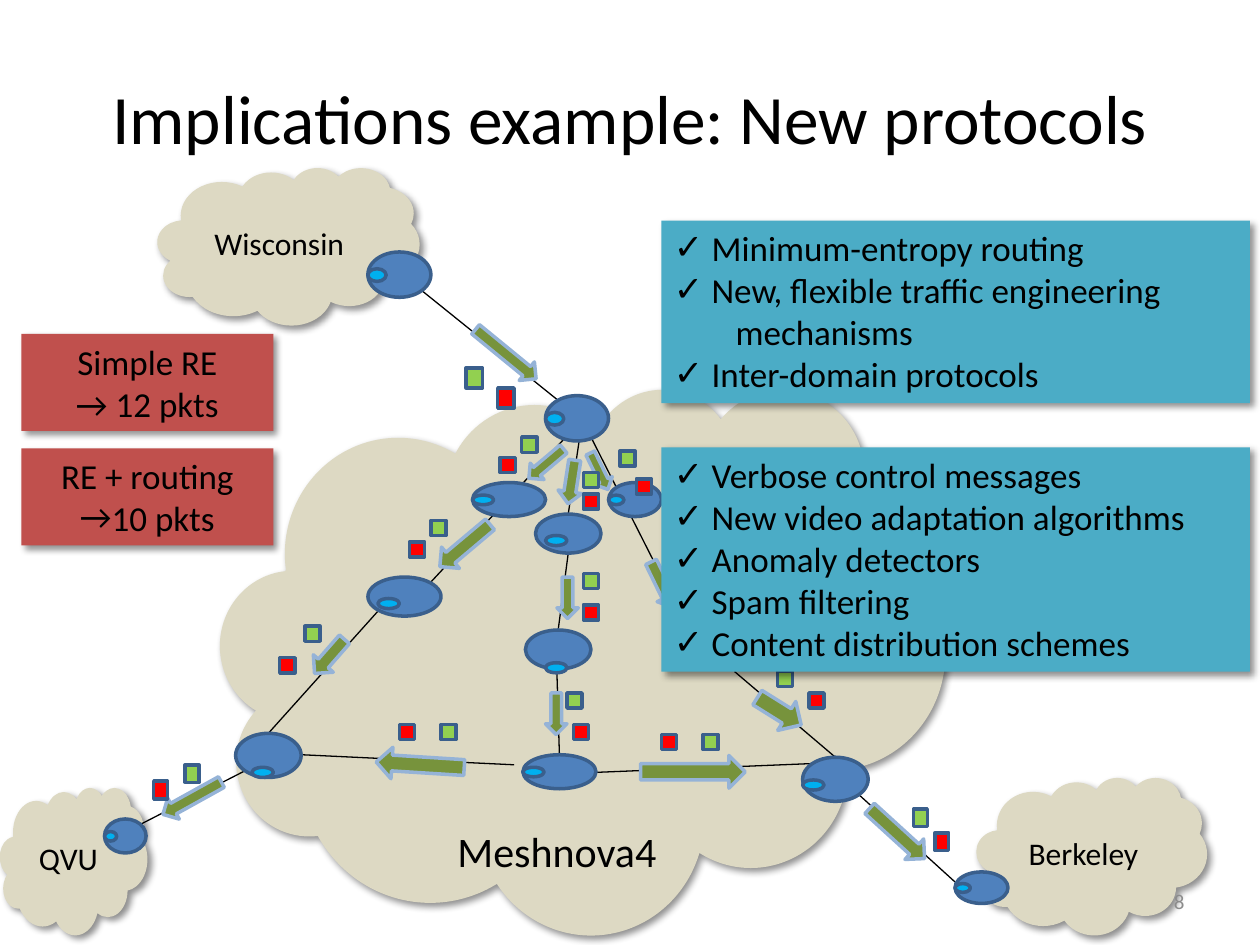
from lxml import etree
from pptx import Presentation
from pptx.dml.color import RGBColor
from pptx.enum.shapes import MSO_CONNECTOR, MSO_SHAPE
from pptx.enum.text import MSO_ANCHOR, PP_ALIGN
from pptx.oxml.ns import qn
from pptx.util import Inches, Pt

CLOUD, RECT, OVAL, ARROW = (MSO_SHAPE.CLOUD, MSO_SHAPE.RECTANGLE,
                            MSO_SHAPE.OVAL, MSO_SHAPE.DOWN_ARROW)
LEFT, CENTER, RIGHT = PP_ALIGN.LEFT, PP_ALIGN.CENTER, PP_ALIGN.RIGHT
TOP, MIDDLE = MSO_ANCHOR.TOP, MSO_ANCHOR.MIDDLE
FONT = "Calibri"
COLORS = {
    "cloud": "DDD9C3", "node": "4F81BD", "edge": "3A5F8C", "port": "00B0F0",
    "green": "92D050", "red": "FF0000", "arrow": "77933C", "arrow_edge": "95B3D7",
    "result": "C0504D", "list": "4BACC6", "text": "000000", "number": "8C8C8C",
}

# Content: boxes are (left, top, width, height)
TITLE = "Implications example: New protocols"
CLOUDS = [
    ((1.25, 1.33, 2.08, 1.25), "Wisconsin"),
    ((1.75, 3.08, 5.75, 4.33), ""),
    ((7.75, 6.17, 1.83, 1.25), "Berkeley"),
    ((0, 6.25, 1.17, 1.17), "QVU"),
]
LABELS = [
    ((3.42, 6.5, 2, 0.5), "Meshnova4", 24, "text", CENTER),
    ((7.17, 6.95, 2.33, 0.4), "8", 12, "number", RIGHT),
]
LINKS = [
    (3.34, 2.3, 4.47, 3.21), (4.62, 3.33, 3.41, 4.63), (3, 4.85, 2.13, 5.82),
    (4.62, 3.33, 5.49, 5.05), (5.83, 5.33, 6.63, 6.01), (4.61, 3.41, 4.51, 4.08),
    (4.51, 4.39, 4.43, 5), (4.42, 5.33, 4.44, 5.99), (4.08, 6.07, 2.39, 5.99),
    (4.73, 6.13, 6.45, 6.06), (1.94, 6.12, 1.12, 6.54), (6.82, 6.31, 7.58, 7),
]
# Node box, then the port's corner (None: at the left, in proportion)
NODES = [
    ((2.92, 4.58, 0.58, 0.31), (3, 4.75)),
    ((1.87, 5.82, 0.52, 0.35), (2, 6.09)),
    ((6.37, 6.01, 0.52, 0.35), (6.37, 6.19)),
    ((4.25, 4.08, 0.52, 0.31), (4.33, 4.25)),
    ((4.17, 5, 0.52, 0.31), (4.33, 5.26)),
    ((4.15, 5.99, 0.58, 0.27), None),
    ((2.92, 2, 0.5, 0.36), None),
    ((0.83, 6.5, 0.33, 0.27), None),
    ((7.58, 6.92, 0.42, 0.25), None),
    ((3.75, 3.83, 0.58, 0.27), None),
    ((4.83, 3.83, 0.42, 0.27), None),
    ((4.33, 3.14, 0.5, 0.36), None),
]
# Unrotated box and rotation of each flow arrow
ARROWS = [
    ((1.43, 6.07, 0.19, 0.53), 61), ((7.01, 6.32, 0.22, 0.59), 312.4),
    ((3.92, 2.5, 0.19, 0.62), 309.3), ((5.16, 4.44, 0.19, 0.4), 334),
    ((2.51, 5.03, 0.21, 0.36), 41.2), ((6.05, 5.44, 0.27, 0.41), 302),
    ((3.58, 4.07, 0.22, 0.52), 49.9), ((4.25, 3.5, 0.17, 0.36), 49.9),
    ((4.68, 3.58, 0.15, 0.32), 334), ((3.21, 5.72, 0.25, 0.7), 93.6),
    ((4.44, 3.65, 0.19, 0.35), 8.7), ((5.37, 5.71, 0.26, 0.83), 270),
    ((4.42, 4.58, 0.17, 0.33), 0), ((4.33, 5.5, 0.17, 0.33), 0),
]
# Packet size: corners of the green and the red packet of each pair
PACKETS = {
    (0.13, 0.16): [((3.7, 2.92), (3.95, 3.08))],
    (0.11, 0.14): [((7.25, 6.42), (7.42, 6.61)), ((1.47, 6.07), (1.22, 6.2))],
    (0.12, 0.12): [
        ((3.42, 4.13), (3.25, 4.3)), ((2.42, 4.97), (2.22, 5.22)),
        ((6.17, 5.33), (6.42, 5.5)), ((4.14, 3.47), (3.97, 3.63)),
        ((4.92, 3.58), (5.05, 3.8)), ((4.5, 5.5), (4.55, 5.75)),
        ((4.63, 4.55), (4.63, 4.8)), ((5.58, 5.83), (5.25, 5.83)),
        ((3.5, 5.75), (3.17, 5.75)), ((4.63, 3.75), (4.63, 3.92)),
    ],
}
# Panel lines are (bullet, left indent, text)
CHECK = ("✓", 0.3)
PANELS = [
    ((0.17, 3.56, 2, 0.77), "result", CENTER,
     [("", 0, "RE + routing"), ("→", 0, "10 pkts")]),
    ((0.17, 2.65, 2, 0.77), "result", CENTER,
     [("", 0, "Simple RE\v→ 12 pkts")]),
    ((5.25, 3.55, 4.67, 1.78), "list", LEFT,
     [(*CHECK, "Verbose control messages"), (*CHECK, "New video adaptation algorithms"),
      (*CHECK, "Anomaly detectors"), (*CHECK, "Spam filtering"),
      (*CHECK, "Content distribution schemes")]),
    ((5.25, 1.75, 4.67, 1.45), "list", LEFT,
     [(*CHECK, "Minimum-entropy routing"), (*CHECK, "New, flexible traffic engineering"),
      ("", 0.49, "mechanisms"), (*CHECK, "Inter-domain protocols")]),
]


def rgb(name):
    return RGBColor.from_string(COLORS[name])


def add_shadow(sp):
    effects = etree.SubElement(sp._element.spPr, qn("a:effectLst"))
    shadow = etree.SubElement(effects, qn("a:outerShdw"), blurRad=str(Pt(4)),
                              dist=str(Pt(3)), dir=str(45 * 60000), rotWithShape="0")
    color = etree.SubElement(shadow, qn("a:srgbClr"), val="000000")
    etree.SubElement(color, qn("a:alpha"), val="43000")


def add_shape(kind, box, fill, edge=None, shadow=False):
    sp = s.shapes.add_shape(kind, *map(Inches, box))
    sp.fill.solid()
    sp.fill.fore_color.rgb = rgb(fill)
    if edge:
        sp.line.color.rgb = rgb(edge)
        sp.line.width = Pt(2)
    else:
        sp.line.fill.background()
    if shadow:
        add_shadow(sp)
    else:
        sp.shadow.inherit = False
    return sp


def write(sp, lines, size, color="text", align=CENTER, anchor=MIDDLE):
    tf = sp.text_frame
    tf.word_wrap = True
    tf.vertical_anchor = anchor
    for i, (bullet, indent, text) in enumerate(lines):
        p = tf.add_paragraph() if i else tf.paragraphs[0]
        p.text = text
        p.alignment = align
        for r in p.runs:
            for key, value in {"name": FONT, "size": Pt(size)}.items():
                setattr(r.font, key, value)
            r.font.color.rgb = rgb(color)
        pPr = p._p.get_or_add_pPr()
        if indent:
            pPr.set("marL", str(Inches(indent)))
            pPr.set("indent", str(-Inches(indent) if bullet else 0))
        if bullet:
            etree.SubElement(pPr, qn("a:buFont"), typeface=FONT)
            etree.SubElement(pPr, qn("a:buChar"), char=bullet)


prs = Presentation()
prs.slide_width, prs.slide_height = Inches(10), Inches(7.5)
s = prs.slides.add_slide(prs.slide_layouts[5])

# Title
title = s.shapes.title
title.left, title.top, title.width, title.height = map(Inches, (0.5, 0.3, 9, 1.25))
write(title, [("", 0, TITLE)], 39.6)

# Networks
for box, name in CLOUDS:
    sp = add_shape(CLOUD, box, "cloud", shadow=True)
    if name:
        write(sp, [("", 0, name)], 18)
for box, text, size, color, align in LABELS:
    write(s.shapes.add_textbox(*map(Inches, box)), [("", 0, text)], size, color, align)

# Links
for ends in LINKS:
    link = s.shapes.add_connector(MSO_CONNECTOR.STRAIGHT, *map(Inches, ends))
    link.line.color.rgb = rgb("text")
    link.line.width = Pt(0.75)
    etree.SubElement(link._element.spPr, qn("a:effectLst"))

# Routers with their ports
for box, corner in NODES:
    add_shape(OVAL, box, "node", "edge")
    x, y, w, h = box
    port = (*corner, 0.17, 0.08) if corner else (x, y + 0.37 * h, 0.29 * w, 0.28 * h)
    add_shape(OVAL, port, "port", "edge")

# Flows and packets
for box, angle in ARROWS:
    add_shape(ARROW, box, "arrow", "arrow_edge").rotation = angle
for size, pairs in PACKETS.items():
    for pair in pairs:
        for corner, color in zip(pair, ("green", "red")):
            add_shape(RECT, (*corner, *size), color, "edge")

# Text panels
for box, fill, align, lines in PANELS:
    write(add_shape(RECT, box, fill, shadow=True), lines, 20, align=align, anchor=TOP)

prs.save("out.pptx")
